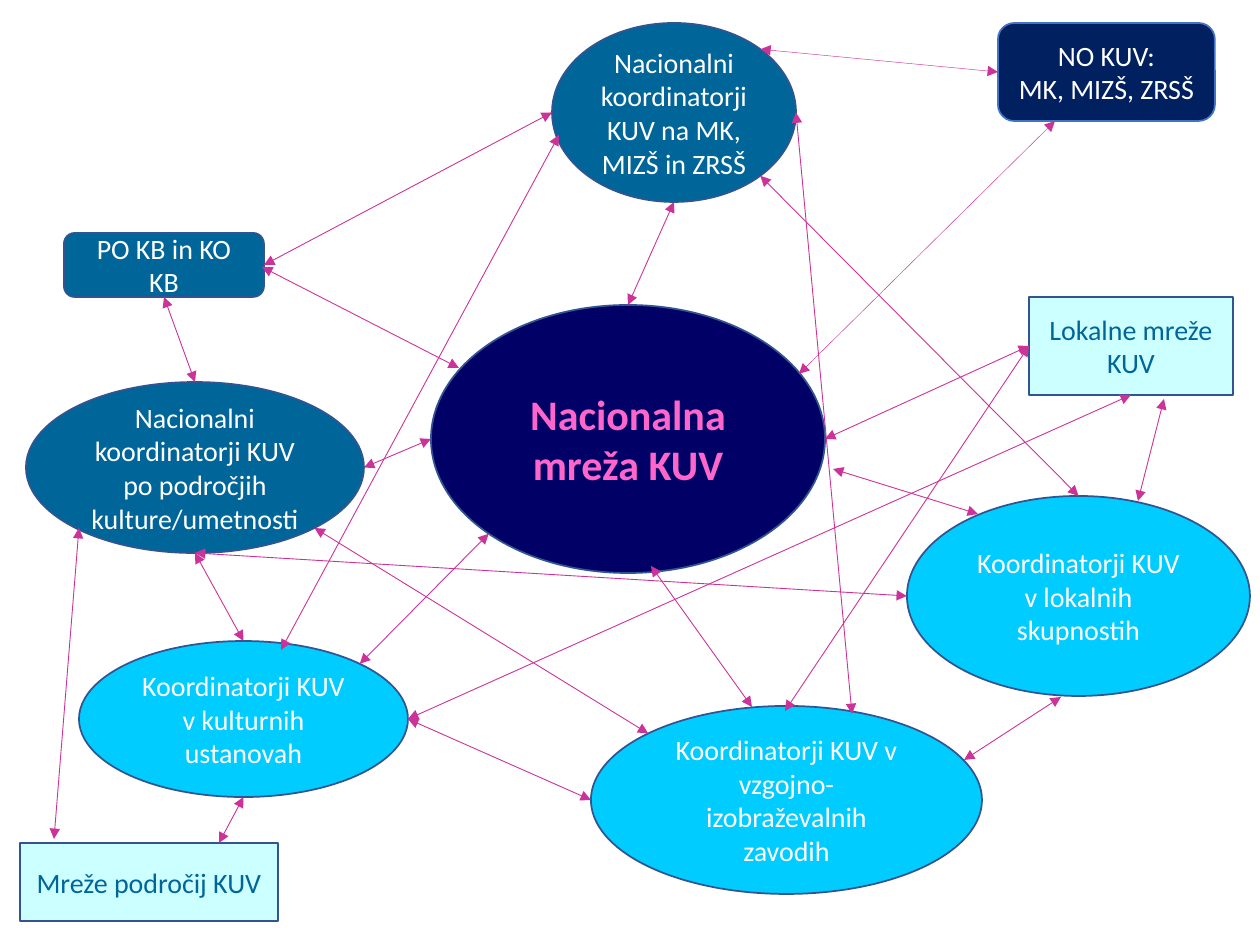
import math

import pptx
import pptx.dml.color
import pptx.enum.shapes
import pptx.enum.text
import pptx.oxml
import pptx.oxml.ns
import pptx.util

RGB = pptx.dml.color.RGBColor
KIND = pptx.enum.shapes.MSO_SHAPE
OVAL, ROUND, RECT = KIND.OVAL, KIND.ROUNDED_RECTANGLE, KIND.RECTANGLE

NAVY = RGB(0x00, 0x00, 0x66)
DARK = RGB(0x00, 0x20, 0x60)
TEAL = RGB(0x00, 0x66, 0x99)
SKY = RGB(0x00, 0xCC, 0xFF)
PALE = RGB(0xCC, 0xFF, 0xFF)
WHITE = RGB(0xFF, 0xFF, 0xFF)
PINK = RGB(0xFF, 0x66, 0xCC)
ROSE = RGB(0xCC, 0x33, 0x99)
EDGE = RGB(0x32, 0x54, 0x91)
BLUE = RGB(0x44, 0x72, 0xC4)

SCALE = 914400 / 126
PAGE = (0, 0, 1260, 945)
SIDES = ["E", "SE", "S", "SW", "W", "NW", "N", "NE"]
SITES = {"N": 0, "W": 1, "S": 2, "E": 3}

NODES = {
    "core": (OVAL, (431, 305, 394, 268), NAVY, EDGE, PINK, ["Nacionalna mreža KUV"]),
    "school": (OVAL, (591, 706, 391, 188), SKY, EDGE, WHITE,
               ["Koordinatorji KUV v vzgojno-izobraževalnih zavodih"]),
    "local": (OVAL, (907, 496, 343, 200), SKY, EDGE, WHITE,
              ["Koordinatorji KUV v lokalnih skupnostih"]),
    "arts": (OVAL, (79, 641, 329, 156), SKY, EDGE, WHITE,
             ["Koordinatorji KUV v kulturnih ustanovah"]),
    "board": (ROUND, (998, 23, 217, 98), DARK, BLUE, WHITE, ["NO KUV:", "MK, MIZŠ, ZRSŠ"]),
    "office": (ROUND, (64, 233, 200, 64), TEAL, EDGE, WHITE, ["PO KB in KO KB"]),
    "state": (OVAL, (552, 23, 244, 179), TEAL, EDGE, WHITE,
              ["Nacionalni koordinatorji KUV na MK, MIZŠ in ZRSŠ"]),
    "field": (OVAL, (26, 382, 338, 171), TEAL, EDGE, WHITE,
              ["Nacionalni koordinatorji KUV po področjih kulture/umetnosti"]),
    "towns": (RECT, (1029, 297, 204, 98), PALE, EDGE, TEAL, ["Lokalne mreže KUV"]),
    "areas": (RECT, (20, 843, 258, 78), PALE, EDGE, TEAL, ["Mreže področij KUV"]),
}

LINKS = [
    (("arts", "E"), ("school", "W")),
    ((651, 566), (752, 707)),
    ((833, 469), (978, 514)),
    (("state", "W"), ("office", "E")),
    (("office", "S"), ("field", "N")),
    (("field", "S"), ("arts", "N")),
    (("field", "SE"), ("school", "NW")),
    (("field", "S"), ("local", "W")),
    ((1061, 697), (964, 760)),
    (("state", "SE"), ("local", "N")),
    (("state", "S"), ("core", "N")),
    (("core", "SW"), ("arts", "NE")),
    ((262, 267), (459, 368)),
    ((559, 135), (281, 650)),
    (("field", "E"), ("core", "W")),
    ((1164, 399), (1138, 501)),
    (("towns", "W"), (785, 711)),
    (("towns", "W"), ("core", "E")),
    (("arts", "E"), ("towns", "S")),
    (("arts", "S"), (219, 843)),
    ((54, 839), (79, 528)),
    (("state", "E"), (852, 714)),
]
THIN = [
    ((1055, 121), (799, 374)),
    (("state", "NE"), ("board", "W")),
]


def emu(px):
    """Turn px into EMU."""
    return pptx.util.Emu(round(px * SCALE))


def add_node(slide, box, kind, fill, edge, ink, lines, size, bold):
    """Place one labelled shape in its box."""
    shape = slide.shapes.add_shape(kind, *map(emu, box))
    shape.shadow.inherit = False
    shape.fill.solid()
    shape.fill.fore_color.rgb = fill
    shape.line.color.rgb = edge
    shape.line.width = pptx.util.Pt(1)
    frame = shape.text_frame
    frame.word_wrap = True
    frame.vertical_anchor = pptx.enum.text.MSO_ANCHOR.MIDDLE
    for i, line in enumerate(lines):
        para = frame.add_paragraph() if i else frame.paragraphs[0]
        para.alignment = pptx.enum.text.PP_ALIGN.CENTER
        run = para.add_run()
        run.text = line
        run.font.name = "Calibri"
        run.font.size = pptx.util.Pt(size)
        run.font.bold = bold
        run.font.color.rgb = ink
    return shape


def find_end(end, box):
    """Give the px point of a link end, from a node side or a plain point."""
    if end[0] not in NODES:
        return box[0] + end[0], box[1] + end[1]
    x, y, w, h = NODES[end[0]][1]
    turn = math.radians(45 * SIDES.index(end[1]))
    return (box[0] + x + w / 2 * (1 + math.cos(turn)),
            box[1] + y + h / 2 * (1 + math.sin(turn)))


def add_link(slide, box, ends, width, made):
    """Draw a two-headed arrow, joined wherever it meets a rectangle."""
    points = [emu(v) for end in ends for v in find_end(end, box)]
    link = slide.shapes.add_connector(pptx.enum.shapes.MSO_CONNECTOR.STRAIGHT, *points)
    for end, join in zip(ends, (link.begin_connect, link.end_connect)):
        if end[0] in NODES and NODES[end[0]][0] != OVAL:
            join(made[end[0]], SITES[end[1]])
    link.line.color.rgb = ROSE
    link.line.width = pptx.util.Pt(width)
    for tag in ("a:headEnd", "a:tailEnd"):
        head = pptx.oxml.ns.qn(tag)
        link.line._get_or_add_ln().append(pptx.oxml.xmlchemy.OxmlElement(tag))
        link.line._get_or_add_ln().find(head).set("type", "triangle")
    link._element.spPr.append(pptx.oxml.xmlchemy.OxmlElement("a:effectLst"))


def draw_web(slide, box):
    """Place the whole network of nodes and links in the box."""
    made = {}
    for name, (kind, (x, y, w, h), *look) in NODES.items():
        core = name == "core"
        made[name] = add_node(slide, (box[0] + x, box[1] + y, w, h), kind, *look,
                              24 if core else 16, core)
    for group, width in ((LINKS, 0.5), (THIN, 0.25)):
        for ends in group:
            add_link(slide, box, ends, width, made)


def main():
    """Build and save the slide."""
    deck = pptx.Presentation()
    deck.slide_width, deck.slide_height = map(emu, PAGE[2:])
    slide = deck.slides.add_slide(deck.slide_layouts[6])
    draw_web(slide, PAGE)
    deck.save("out.pptx")


if __name__ == "__main__":
    main()
